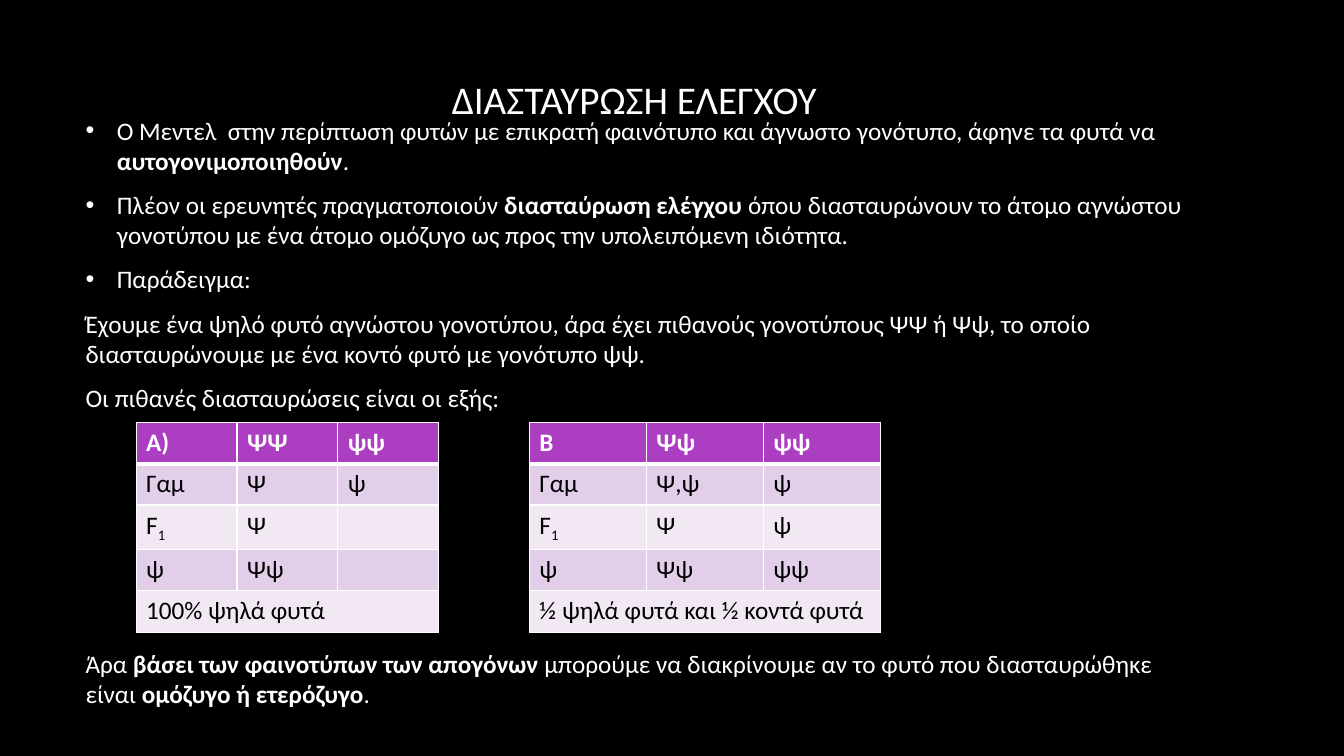
from dataclasses import dataclass

from lxml import etree
from pptx import Presentation
from pptx.dml.color import RGBColor
from pptx.enum.text import MSO_ANCHOR, MSO_AUTO_SIZE, PP_ALIGN
from pptx.oxml.ns import qn
from pptx.util import Inches, Pt

CENTER = PP_ALIGN.CENTER
MIDDLE = MSO_ANCHOR.MIDDLE
NO_AUTOFIT = MSO_AUTO_SIZE.NONE
TITLE_ONLY = 5


@dataclass(frozen=True)
class Theme:
    font: str = "Calibri"
    title_size: int = 28
    text_size: int = 18
    background: str = "000000"
    light: str = "FFFFFF"
    dark: str = "000000"
    header: str = "AC3EC1"
    odd_row: str = "E3CEE9"
    even_row: str = "F1E8F4"


THEME = Theme()
LEFT, WIDTH = 0.75, 11.08
TABLE_TOP, ROW_HEIGHT = 4.19, 0.41

INTRO = [
    (True, ["Ο Μεντελ  στην περίπτωση φυτών με επικρατή φαινότυπο και άγνωστο "
            "γονότυπο, άφηνε τα φυτά να ", "αυτογονιμοποιηθούν", "."]),
    (True, ["Πλέον οι ερευνητές πραγματοποιούν ", "διασταύρωση ελέγχου ",
            "όπου διασταυρώνουν το άτομο αγνώστου γονοτύπου με ένα άτομο "
            "ομόζυγο ως προς την υπολειπόμενη ιδιότητα."]),
    (True, ["Παράδειγμα:"]),
    (False, ["Έχουμε ένα ψηλό φυτό αγνώστου γονοτύπου, άρα έχει πιθανούς "
             "γονοτύπους ΨΨ ή Ψψ, το οποίο διασταυρώνουμε με ένα κοντό φυτό "
             "με γονότυπο ψψ."]),
    (False, ["Οι πιθανές διασταυρώσεις είναι οι εξής:"]),
]
CONCLUSION = [
    (False, ["Άρα ", "βάσει των φαινοτύπων των απογόνων",
             " μπορούμε να διακρίνουμε αν το φυτό που διασταυρώθηκε είναι ",
             "ομόζυγο ή ετερόζυγο", "."]),
]
CROSS_A = [
    ["Α)", "ΨΨ", "ψψ"],
    ["Γαμ", "Ψ", "ψ"],
    ["F1", "Ψ", ""],
    ["ψ", "Ψψ", ""],
    ["100% ψηλά φυτά"],
]
CROSS_B = [
    ["Β", "Ψψ", "ψψ"],
    ["Γαμ", "Ψ,ψ", "ψ"],
    ["F1", "Ψ", "ψ"],
    ["ψ", "Ψψ", "ψψ"],
    ["½ ψηλά φυτά και ½ κοντά φυτά"],
]


def style_font(font, color, size=THEME.text_size, bold=False):
    font.name = THEME.font
    font.size = Pt(size)
    font.bold = bold
    font.color.rgb = RGBColor.from_string(color)


def add_span(para, text, color, bold=False):
    span = para.add_run()
    span.text = text
    style_font(span.font, color, bold=bold)
    return span


def add_bullet(para):
    properties = para._p.get_or_add_pPr()
    properties.set("marL", str(Inches(0.31)))
    properties.set("indent", str(Inches(-0.31)))
    color = etree.SubElement(properties, qn("a:buClr"))
    etree.SubElement(color, qn("a:srgbClr"), val=THEME.light)
    etree.SubElement(properties, qn("a:buFont"), typeface="Arial")
    etree.SubElement(properties, qn("a:buChar"), char="•")


def add_title(page, text):
    box = page.shapes.title
    box.left, box.top = Inches(LEFT), Inches(0.67)
    box.width, box.height = Inches(WIDTH), Inches(0.62)
    frame = box.text_frame
    frame.text = text
    frame.auto_size = NO_AUTOFIT
    frame.vertical_anchor = MIDDLE
    para = frame.paragraphs[0]
    para.alignment = CENTER
    style_font(para.runs[0].font, THEME.light, THEME.title_size)


def add_text(page, top, height, content):
    box = page.shapes.add_textbox(Inches(LEFT), Inches(top), Inches(WIDTH), Inches(height))
    frame = box.text_frame
    frame.word_wrap = True
    for index, (bulleted, spans) in enumerate(content):
        para = frame.add_paragraph() if index else frame.paragraphs[0]
        para.space_after = Pt(10)
        if bulleted:
            add_bullet(para)
        for position, text in enumerate(spans):
            add_span(para, text, THEME.light, bold=position % 2 == 1)


def set_borders(cell, row):
    properties = cell._tc.get_or_add_tcPr()
    widths = {"lnL": 1, "lnR": 1, "lnT": 3 if row == 1 else 1, "lnB": 3 if row == 0 else 1}
    for side, width in widths.items():
        line = etree.SubElement(properties, qn(f"a:{side}"), w=str(Pt(width)))
        fill = etree.SubElement(line, qn("a:solidFill"))
        etree.SubElement(fill, qn("a:srgbClr"), val=THEME.light)


def fill_cell(cell, row, text):
    set_borders(cell, row)
    header = row == 0
    color = THEME.header if header else (THEME.even_row, THEME.odd_row)[row % 2]
    cell.fill.solid()
    cell.fill.fore_color.rgb = RGBColor.from_string(color)
    para = cell.text_frame.paragraphs[0]
    para.font.size = Pt(THEME.text_size)
    ink = THEME.light if header else THEME.dark
    if text == "F1":
        add_span(para, "F", ink)
        subscript = add_span(para, "1", ink)
        subscript.font._element.set("baseline", "-25000")
    elif text:
        add_span(para, text, ink, bold=header)


def add_cross(page, left, column_width, rows):
    columns = len(rows[0])
    table = page.shapes.add_table(
        len(rows), columns, Inches(left), Inches(TABLE_TOP),
        Inches(column_width * columns), Inches(ROW_HEIGHT * len(rows))).table
    for column in table.columns:
        column.width = Inches(column_width)
    for row, texts in enumerate(rows):
        table.rows[row].height = Inches(ROW_HEIGHT)
        for column in range(columns):
            text = texts[column] if column < len(texts) else ""
            fill_cell(table.cell(row, column), row, text)
        if len(texts) == 1:
            table.cell(row, 0).merge(table.cell(row, columns - 1))


def main():
    deck = Presentation()
    deck.slide_width, deck.slide_height = Inches(13.33), Inches(7.5)
    page = deck.slides.add_slide(deck.slide_layouts[TITLE_ONLY])
    page.background.fill.solid()
    page.background.fill.fore_color.rgb = RGBColor.from_string(THEME.background)
    add_title(page, "ΔΙΑΣΤΑΥΡΩΣΗ ΕΛΕΓΧΟΥ")
    add_text(page, 1.09, 3.1, INTRO)
    add_text(page, 6.38, 0.75, CONCLUSION)
    add_cross(page, 1.35, 1, CROSS_A)
    add_cross(page, 5.25, 1.16, CROSS_B)
    deck.save("out.pptx")


if __name__ == "__main__":
    main()
